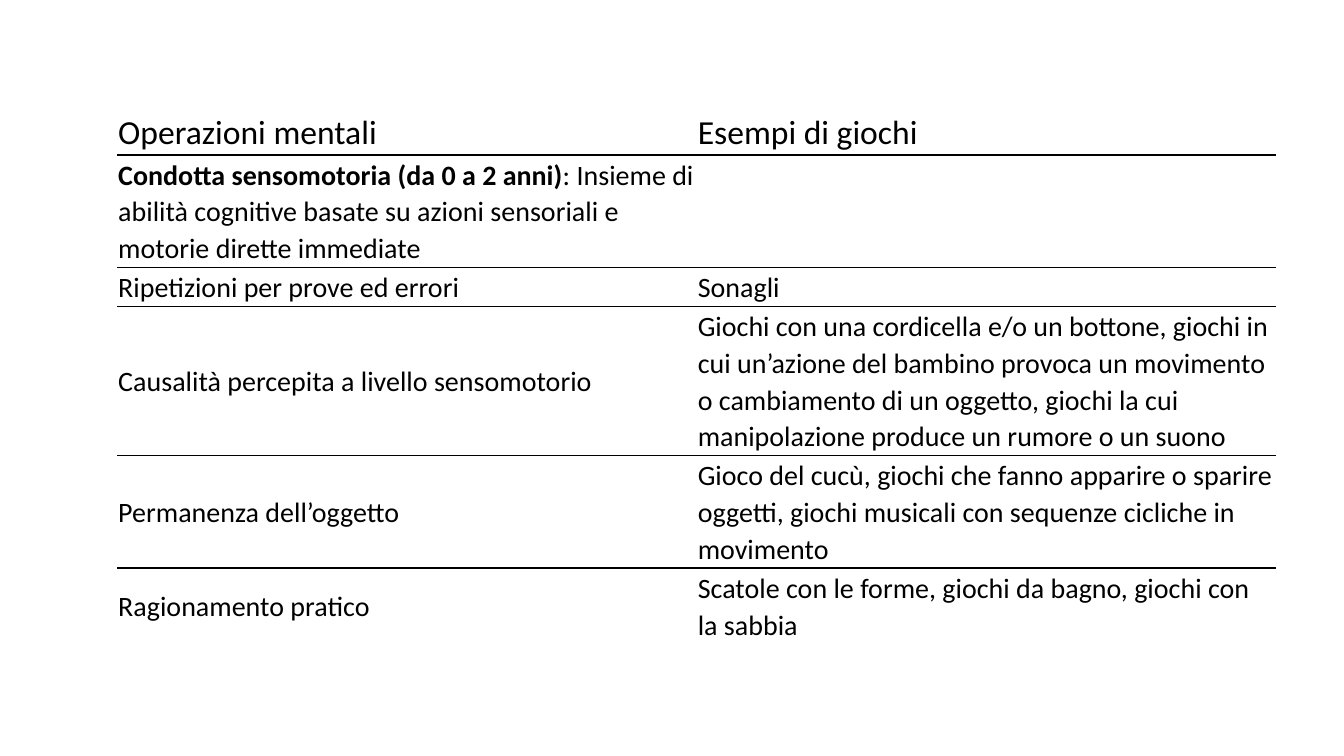
from lxml import etree
from pptx import Presentation
from pptx import util as u
from pptx.dml.color import RGBColor
from pptx.enum import text
from pptx.oxml import ns

COLORS = {"ink": "000000"}

HEADER = ("Operazioni mentali", "Esempi di giochi")
STAGE = (
    ("Condotta sensomotoria (da 0 a 2 anni)", True),
    (": Insieme di abilità cognitive basate su azioni sensoriali e motorie dirette immediate", False),
)
GAMES = [
    ("Ripetizioni per prove ed errori", "Sonagli"),
    ("Causalità percepita a livello sensomotorio",
     "Giochi con una cordicella e/o un bottone, giochi in cui un’azione del bambino "
     "provoca un movimento o cambiamento di un oggetto, giochi la cui manipolazione "
     "produce un rumore o un suono"),
    ("Permanenza dell’oggetto",
     "Gioco del cucù, giochi che fanno apparire o sparire oggetti, giochi musicali "
     "con sequenze cicliche in movimento"),
    ("Ragionamento pratico",
     "Scatole con le forme, giochi da bagno, giochi con la sabbia"),
]
ROW_HEIGHTS = (0.76, 1.47, 0.76, 2.21, 1.47, 0.76)


class SlideBuilder:
    def __init__(self, page, font="Calibri"):
        self.page = page
        self.font = font

    def table(self, left, top, width, height, row_heights, columns):
        frame = self.page.shapes.add_table(
            len(row_heights), columns, u.Cm(left), u.Cm(top), u.Cm(width), u.Cm(height))
        table = frame.table
        table.first_row = table.horz_banding = False
        for row, row_height in zip(table.rows, row_heights):
            row.height = u.Cm(row_height)
        frame.height = u.Cm(height)
        return table

    def cell(self, cell, spans, size):
        """Write (wording, bold) spans into a table cell."""
        cell.margin_left = cell.margin_right = u.Cm(0.03)
        cell.margin_top = cell.margin_bottom = u.Cm(0.03)
        cell.vertical_anchor = text.MSO_ANCHOR.MIDDLE
        para = cell.text_frame.paragraphs[0]
        para.line_spacing = 1.07
        para.space_after = u.Pt(8)
        for wording, bold in spans:
            span = para.add_run()
            span.text = wording
            span.font.name = self.font
            span.font.size = u.Pt(size)
            span.font.bold = bold
            span.font.color.rgb = RGBColor.from_string(COLORS["ink"])

    def rules(self, cell, ruled_sides):
        """Clear the fill and draw a line only on the given sides."""
        properties = cell._tc.get_or_add_tcPr()
        for side in "LRTB":
            line = etree.SubElement(properties, ns.qn(f"a:ln{side}"), w=str(u.Pt(1)))
            if side in ruled_sides:
                fill = etree.SubElement(line, ns.qn("a:solidFill"))
                etree.SubElement(fill, ns.qn("a:srgbClr"), val=COLORS["ink"])
            else:
                etree.SubElement(line, ns.qn("a:noFill"))
        cell.fill.background()


def main():
    deck = Presentation()
    deck.slide_width, deck.slide_height = u.Cm(33.87), u.Cm(19.05)
    builder = SlideBuilder(deck.slides.add_slide(deck.slide_layouts[6]))

    rows = [[[(wording, False)] for wording in HEADER], [STAGE, ()]]
    rows += [[[(wording, False)] for wording in pair] for pair in GAMES]
    table = builder.table(2.95, 2.74, 29.21, 12.93, ROW_HEIGHTS, len(HEADER))
    last = len(rows) - 1
    for index, row in enumerate(rows):
        sides = ("T" if index > 0 else "") + ("B" if index < last else "")
        for column, spans in enumerate(row):
            cell = table.cell(index, column)
            builder.cell(cell, spans, 24 if index == 0 else 20)
            builder.rules(cell, sides)

    deck.save("out.pptx")


if __name__ == "__main__":
    main()
